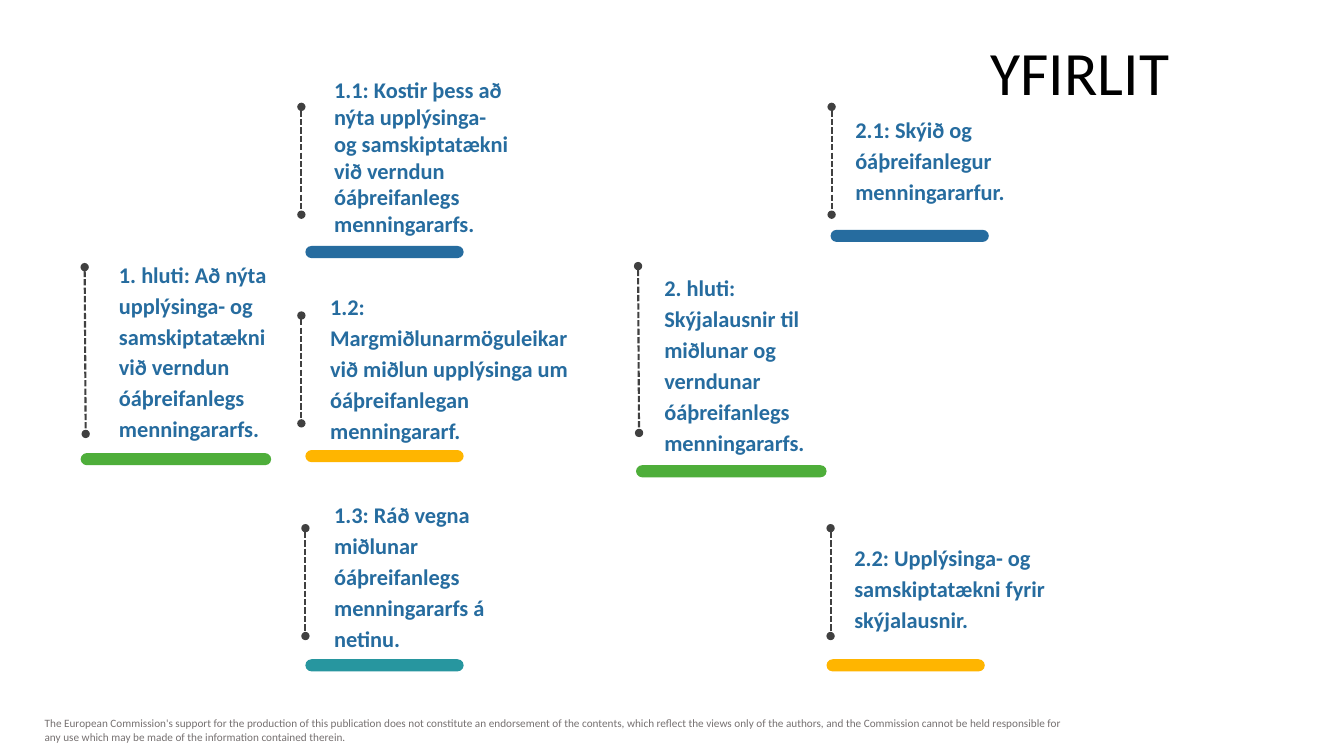
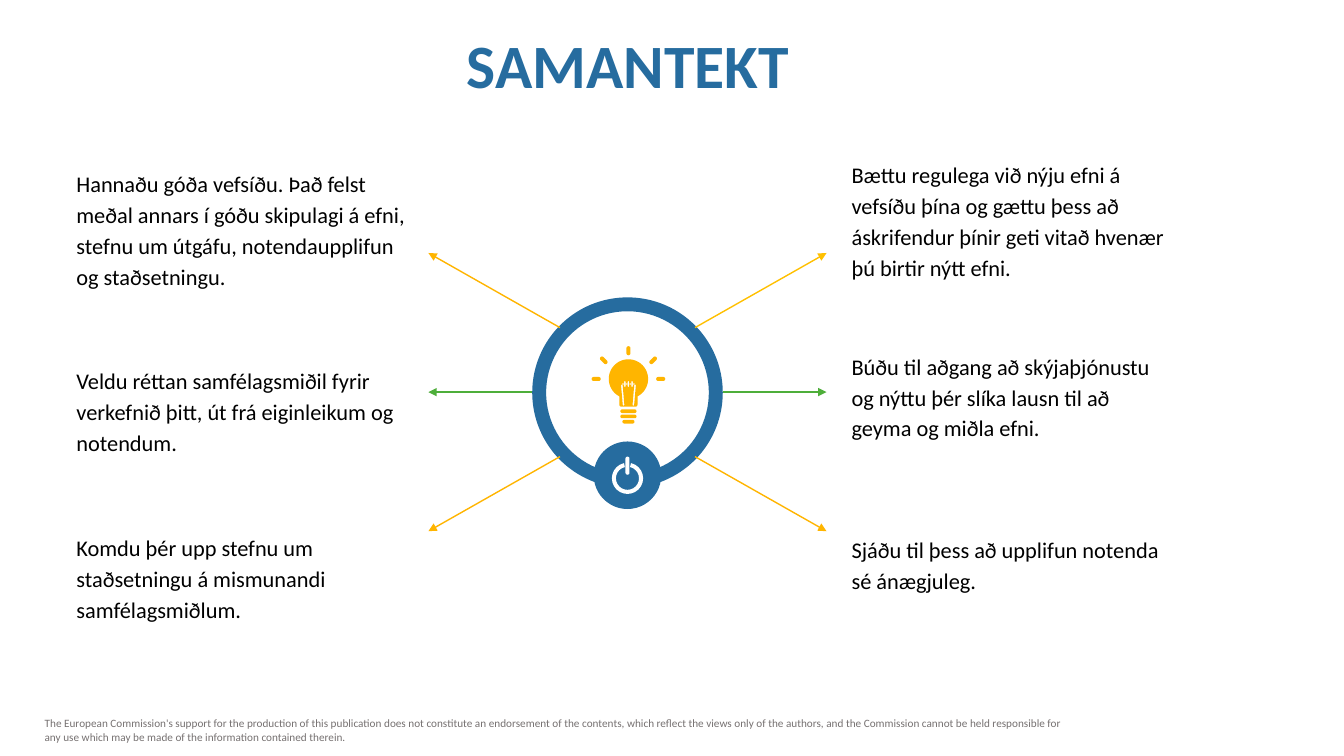
from dataclasses import dataclass
from math import cos, radians, sin

from lxml import etree
from pptx import Presentation
from pptx.dml.color import RGBColor
from pptx.enum.dml import MSO_LINE
from pptx.enum.shapes import MSO_CONNECTOR, MSO_SHAPE
from pptx.enum.text import MSO_ANCHOR, PP_ALIGN
from pptx.oxml.ns import qn
from pptx.util import Inches, Pt

OVAL, RING, ARC = MSO_SHAPE.OVAL, MSO_SHAPE.DONUT, MSO_SHAPE.BLOCK_ARC
ROUND = MSO_SHAPE.ROUNDED_RECTANGLE
LINE, DASH = MSO_CONNECTOR.STRAIGHT, MSO_LINE.SQUARE_DOT
TOP, MIDDLE = MSO_ANCHOR.TOP, MSO_ANCHOR.MIDDLE
LEFT, CENTER, RIGHT = PP_ALIGN.LEFT, PP_ALIGN.CENTER, PP_ALIGN.RIGHT

# Grid of square cells, ten to the inch: columns across, rows down
COLS, ROWS = 133.33, 75
FONT = "Calibri"
HUES = {"blue": "266C9F", "green": "4EAE3A", "gold": "FFB500", "amber": "FFC000",
        "teal": "27969F", "dark": "404040", "gray": "767171",
        "black": "000000", "white": "FFFFFF"}
FOOT = ("The European Commission's support for the production of this publication "
        "does not constitute an endorsement of the contents, which reflect the views "
        "only of the authors, and the Commission cannot be held responsible for any "
        "use which may be made of the information contained therein.")

Box = tuple[float, float, float, float]
Spot = tuple[float, float]


@dataclass(frozen=True)
class Style:
    size: int
    hue: str
    bold: bool = False
    align: PP_ALIGN = LEFT
    lead: float = 1.0
    pad: float = 1.0
    dent: float = 0
    anchor: MSO_ANCHOR = TOP


TITLE = Style(44, "black", align=RIGHT, lead=0.9)
SUMMARY = Style(44, "blue", True, CENTER, 0.9)
SMALL = Style(8, "gray")
PART = Style(16, "blue", True, lead=1.15, pad=1.2, dent=2.5)
TOPIC = Style(16, "blue", True, lead=1.15, pad=1.2)
TIGHT = Style(16, "blue", True, pad=1.2)
BODY = Style(16, "black", lead=1.15, anchor=MIDDLE)


@dataclass(frozen=True)
class Item:
    text: str
    box: Box
    rule: Spot
    bar: Spot
    hue: str
    style: Style = TOPIC


@dataclass(frozen=True)
class Note:
    text: str
    box: Box
    side: int
    tier: int
    hue: str


ITEMS = [
    Item("1. hluti: Að nýta upplýsinga- og samskiptatækni við verndun "
         "óáþreifanlegs menningararfs.",
         (8.1, 25, 21.8, 19.4), (8.4, 26.5), (8, 44.95), "green", PART),
    Item("1.1: Kostir þess að nýta upplýsinga- og samskiptatækni við verndun "
         "óáþreifanlegs menningararfs.",
         (31.95, 7.05, 20, 17.2), (29.9, 10.6), (30.3, 24.4), "blue", TIGHT),
    Item("1.2: Margmiðlunarmöguleikar við miðlun upplýsinga um "
         "óáþreifanlegan menningararf.",
         (31.55, 28.2, 26.4, 16.3), (29.9, 31.3), (30.3, 44.65), "gold"),
    Item("1.3: Ráð vegna miðlunar óáþreifanlegs menningararfs á netinu.",
         (31.95, 48.85, 17.6, 16.3), (30.3, 52.4), (30.3, 65.4), "teal"),
    Item("2. hluti: Skýjalausnir til miðlunar og verndunar óáþreifanlegs "
         "menningararfs.",
         (62.2, 26.35, 22.9, 19.4), (63.3, 26.4), (63.1, 46.15), "green", PART),
    Item("2.1: Skýið og óáþreifanlegur menningararfur.",
         (83.65, 10.65, 17.3, 10.1), (82.5, 10.6), (82.4, 22.8), "blue"),
    Item("2.2: Upplýsinga- og samskiptatækni fyrir skýjalausnir.",
         (83.55, 53.1, 25.4, 10.1), (82.4, 52.4), (82, 65.4), "gold"),
]

NOTES = [
    Note("Hannaðu góða vefsíðu. Það felst meðal annars í góðu skipulagi á efni, "
         "stefnu um útgáfu, notendaupplifun og staðsetningu.",
         (6.6, 16, 35.2, 13.2), -1, -1, "gold"),
    Note("Veldu réttan samfélagsmiðil fyrir verkefnið þitt, út frá eiginleikum "
         "og notendum.", (6.6, 35.6, 34.5, 10.1), -1, 0, "green"),
    Note("Komdu þér upp stefnu um staðsetningu á mismunandi samfélagsmiðlum.",
         (6.6, 52.15, 35.2, 10.1), -1, 1, "gold"),
    Note("Bættu regulega við nýju efni á vefsíðu þína og gættu þess að "
         "áskrifendur þínir geti vitað hvenær þú birtir nýtt efni.",
         (83.5, 15.1, 33, 13.2), 1, -1, "amber"),
    Note("Búðu til aðgang að skýjaþjónustu og nýttu þér slíka lausn til að "
         "geyma og miðla efni.", (83.5, 34.15, 33, 10.1), 1, 0, "green"),
    Note("Sjáðu til þess að upplifun notenda sé ánægjuleg.",
         (83.5, 52.4, 33, 7), 1, 1, "gold"),
]


def cells(*nums: float) -> list[int]:
    return [Inches(num / 10) for num in nums]


def tint(name: str) -> RGBColor:
    return RGBColor.from_string(HUES[name])


def apply(goal, form: dict) -> None:
    for key, value in form.items():
        setattr(goal, key, value)


def write(slide, text: str, box: Box, style: Style) -> None:
    frame = slide.shapes.add_textbox(*cells(*box)).text_frame
    side, edge = cells(style.pad, 0.5)
    apply(frame, {"word_wrap": True, "vertical_anchor": style.anchor,
                  "margin_left": side, "margin_right": side,
                  "margin_top": edge, "margin_bottom": edge})
    para = frame.paragraphs[0]
    apply(para, {"alignment": style.align, "line_spacing": style.lead})
    if style.dent:
        para._p.get_or_add_pPr().set("marL", str(cells(style.dent)[0]))
    run = para.add_run()
    run.text = text
    apply(run.font, {"name": FONT, "size": Pt(style.size), "bold": style.bold})
    run.font.color.rgb = tint(style.hue)


def paint(form, hue: str) -> None:
    form.shadow.inherit = False
    form.fill.solid()
    form.fill.fore_color.rgb = tint(hue)
    form.line.fill.background()


def shape(slide, kind: MSO_SHAPE, box: Box, hue: str, tune: tuple = ()) -> None:
    form = slide.shapes.add_shape(kind, *cells(*box))
    paint(form, hue)
    for i, value in enumerate(tune):
        form.adjustments[i] = value


def pill(slide, box: Box, hue: str) -> None:
    shape(slide, ROUND, box, hue, (0.5,))


def link(slide, start: Spot, end: Spot, hue: str, width: float,
         ends: dict, dash: MSO_LINE | None = None) -> None:
    form = slide.shapes.add_connector(LINE, *cells(*start, *end))
    form.line.color.rgb = tint(hue)
    apply(form.line, {"width": Pt(width), "dash_style": dash})
    for tag, kind in ends.items():
        etree.SubElement(form.line._get_or_add_ln(), qn(tag)).set("type", kind)
    etree.SubElement(form._element.spPr, qn("a:effectLst"))


def start(deck, title: str, box: Box, style: Style):
    """Add a blank slide with the shared footer and a title."""
    slide = deck.slides.add_slide(deck.slide_layouts[6])
    write(slide, FOOT, (3.45, 70.6, 104.6, 3.7), SMALL)
    write(slide, title, box, style)
    return slide


def outline(deck) -> None:
    slide = start(deck, "YFIRLIT", (30.9, 3.7, 86.1, 7.9), TITLE)
    dots = {"a:headEnd": "oval", "a:tailEnd": "oval"}
    for item in ITEMS:
        main = item.style is PART
        tall, wide, lean = (16.55, 18.9, 0.1) if main else (10.7, 15.7, 0)
        x, y = item.rule
        pill(slide, (*item.bar, wide, 1.2), item.hue)
        link(slide, (x, y), (x + lean, y + tall), "dark", 1.5, dots, DASH)
        write(slide, item.text, item.box, item.style)


def arc(x: float, y: float, size: float, first: float, last: float,
        steps: int) -> list[Spot]:
    turns = [radians(first + (last - first) * i / steps) for i in range(steps + 1)]
    return [(x + size * cos(turn), y + size * sin(turn)) for turn in turns]


def rod(x: float, y: float, wide: float, thick: float, turn: float) -> list[Spot]:
    """Outline a round-ended bar centred on x, y."""
    reach = (wide - thick) / 2
    dx, dy = reach * cos(radians(turn)), reach * sin(radians(turn))
    return (arc(x + dx, y + dy, thick / 2, turn - 90, turn + 90, 8)
            + arc(x - dx, y - dy, thick / 2, turn + 90, turn + 270, 8))


def bulb(slide, x: float, y: float) -> None:
    """Draw a light bulb whose glass is centred on x, y."""
    # Glass and neck
    loops = [arc(0, 0, 1.95, 117.5, 422.5, 60)
             + arc(0.7, 2.55, 0.2, 0, 90, 6) + arc(-0.7, 2.55, 0.2, 90, 180, 6)]
    # Screw base, narrowing downwards
    loops += [rod(0, 3.2 + i * 0.52, wide, 0.36, 0)
              for i, wide in enumerate((1.6, 1.6, 1.2))]
    # Rays
    loops += [rod(dx, dy, 0.9, 0.4, turn) for dx, dy, turn in (
        (-3.2, 0, 0), (-2.45, -1.85, 45), (0, -2.8, 90),
        (2.45, -1.85, 135), (3.2, 0, 0))]
    # Filament, cut out of the glass
    loops += [rod(dx, 0.5, 0.6, 0.14, 90) for dx in (-0.36, 0, 0.36)]
    loops += [rod(dx, 0.5, 0.2, 0.1, 0) for dx in (-0.54, -0.18, 0.18, 0.54)]
    loops += [rod(side * 0.57, 1.6, 2.1, 0.16, 90 + side * 5) for side in (-1, 1)]
    pen = None
    for loop in loops:
        spots = [tuple(cells(x + dx, y + dy)) for dx, dy in loop]
        if pen is None:
            pen = slide.shapes.build_freeform(*spots[0], scale=1.0)
        else:
            pen.move_to(*spots[0])
        pen.add_line_segments(spots[1:], close=True)
    paint(pen.convert_to_shape(), "gold")


def power(slide, x: float, y: float) -> None:
    """Draw a power button centred on x, y."""
    shape(slide, OVAL, (x - 3.35, y - 3.35, 6.7, 6.7), "blue")
    # Arc angles: degrees times 0.6, open at the top
    shape(slide, ARC, (x - 1.55, y - 1.25, 3.1, 3.1), "white",
          (283 * 0.6, 257 * 0.6, 0.13))
    pill(slide, (x - 0.2, y - 1.85, 0.4, 1.8), "white")


def recap(deck) -> None:
    slide = start(deck, "SAMANTEKT", (28.65, 3.05, 67.3, 7.9), SUMMARY)
    x, y, half = 62.25, 38.95, 9.45
    shape(slide, RING, (x - half, y - half, 2 * half, 2 * half), "blue", (0.073,))
    bulb(slide, 62.35, 37.6)
    power(slide, x, 47.15)
    for note in NOTES:
        near = 6.7 if note.tier else half
        link(slide, (x + note.side * near, 38.9 + note.tier * 6.4),
             (x + note.side * 19.75, 38.9 + note.tier * 13.8),
             note.hue, 1, {"a:tailEnd": "triangle"})
        write(slide, note.text, note.box, BODY)


def main() -> None:
    deck = Presentation()
    deck.slide_width, deck.slide_height = cells(COLS, ROWS)
    outline(deck)
    recap(deck)
    deck.save("out.pptx")


if __name__ == "__main__":
    main()
